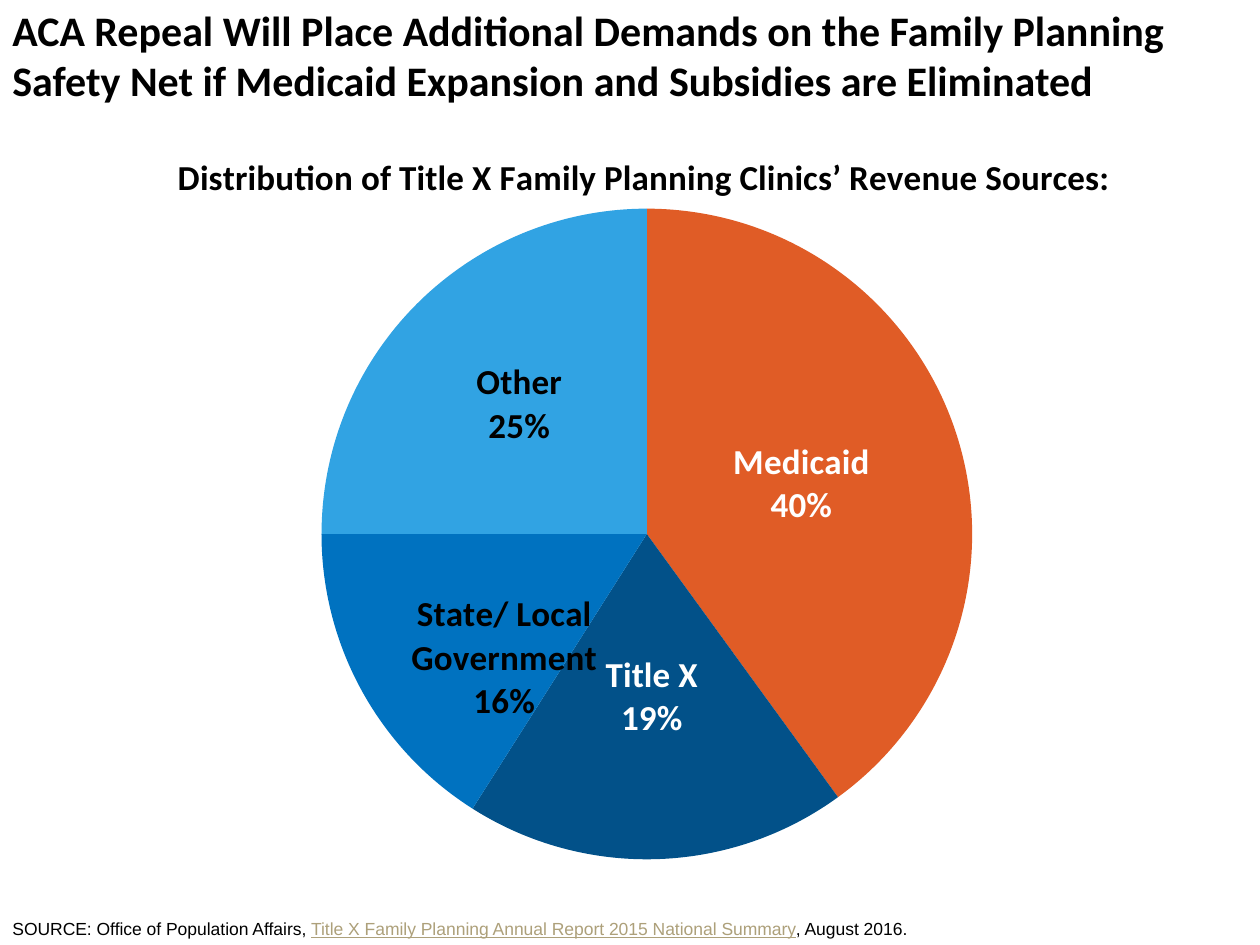
from lxml.etree import SubElement
from pptx import Presentation
from pptx.chart.data import CategoryChartData
from pptx.dml.color import RGBColor
from pptx.enum.chart import XL_CHART_TYPE, XL_LABEL_POSITION
from pptx.enum.text import MSO_ANCHOR
from pptx.oxml import parse_xml
from pptx.oxml.ns import nsdecls, qn
from pptx.util import Pt

BLACK = RGBColor(0x00, 0x00, 0x00)
WHITE = RGBColor(0xFF, 0xFF, 0xFF)
ORANGE = RGBColor(0xE0, 0x5C, 0x26)
NAVY = RGBColor(0x02, 0x51, 0x89)
BLUE = RGBColor(0x00, 0x72, 0xC0)
SKY = RGBColor(0x31, 0xA3, 0xE3)
LINK = RGBColor(0xAD, 0xA0, 0x7A)

HEADING = {"name": "Calibri", "size": Pt(24), "bold": True}
CHART_TEXT = {"name": "Calibri", "size": Pt(20), "bold": True}
SOURCE_TEXT = {"name": "Arial", "size": Pt(10)}

# Source, share, slice colour, label colour, label shift (x, y as chart fractions)
REVENUE = [
    ("Medicaid", 0.40, ORANGE, WHITE, (0, 0)),
    ("Title X", 0.19, NAVY, WHITE, (0, 0)),
    ("State/ Local Government", 0.16, BLUE, BLACK, (0, 0.06)),
    ("Other", 0.25, SKY, BLACK, (-0.01, -0.02)),
]


def format_font(font, style, color):
    for attribute, value in style.items():
        setattr(font, attribute, value)
    font.color.rgb = color


def manual_layout(**places):
    """Return a c:layout; values are child names and their settings, in schema order."""
    children = "".join(f'<c:{name} val="{value}"/>' for name, value in places.items())
    return parse_xml(
        f"<c:layout {nsdecls('c')}><c:manualLayout>{children}</c:manualLayout></c:layout>")


def add_text(slide, box, runs, style, anchor):
    frame = slide.shapes.add_textbox(*map(Pt, box)).text_frame
    frame.word_wrap = True
    frame.vertical_anchor = anchor
    for words, color, underlined in runs:
        run = frame.paragraphs[0].add_run()
        run.text = words
        format_font(run.font, style, color)
        run.font.underline = underlined


def label_slice(point, color, shift):
    label = point.data_label
    format_font(label.font, CHART_TEXT, color)
    label.position = XL_LABEL_POSITION.CENTER


def complete_label(label_xml, shift):
    """Show name over value, and move the label by the given shift."""
    label_xml.find(qn("c:showCatName")).set("val", "1")
    SubElement(label_xml, qn("c:separator")).text = "\n"
    index = label_xml.find(qn("c:idx"))
    index.addnext(parse_xml(
        f'<c:numFmt {nsdecls("c")} formatCode="0%" sourceLinked="0"/>'))
    if any(shift):
        index.addnext(manual_layout(x=shift[0], y=shift[1]))


def add_revenue_pie(slide, box):
    data = CategoryChartData(number_format="0%")
    data.categories = [source for source, *_ in REVENUE]
    data.add_series("Series 1", [share for _, share, *_ in REVENUE])
    chart = slide.shapes.add_chart(XL_CHART_TYPE.PIE, *map(Pt, box), data).chart
    format_font(chart.font, {"name": "Calibri", "size": Pt(10)}, BLACK)
    chart.has_legend = False

    heading = chart.chart_title.text_frame.paragraphs[0].add_run()
    heading.text = "Distribution of Title X Family Planning Clinics’ Revenue Sources:"
    format_font(heading.font, CHART_TEXT, BLACK)
    title_xml = chart.chart_title._element
    for layout in title_xml.findall(qn("c:layout")):
        title_xml.remove(layout)
    title_xml.find(qn("c:tx")).addnext(
        manual_layout(xMode="edge", yMode="edge", x=0.13, y=0.04))

    plot = chart.plots[0]
    plot.vary_by_categories = True
    plot_area = plot._element.getparent()
    for layout in plot_area.findall(qn("c:layout")):
        plot_area.remove(layout)
    plot_area.insert(0, manual_layout(
        layoutTarget="inner", xMode="edge", yMode="edge", x=0.25, y=0.11, w=0.52, h=0.89))

    series = plot.series[0]
    for number, (_, _, fill, color, shift) in enumerate(REVENUE):
        point = series.points[number]
        point.format.fill.solid()
        point.format.fill.fore_color.rgb = fill
        format_font(point.data_label.font, CHART_TEXT, color)
        point.data_label.position = XL_LABEL_POSITION.CENTER
        complete_label(series._element.findall(".//" + qn("c:dLbl"))[number], shift)


def main():
    deck = Presentation()
    deck.slide_width, deck.slide_height = Pt(720), Pt(540)
    slide = deck.slides.add_slide(deck.slide_layouts[6])
    add_revenue_pie(slide, (5, 66, 715, 431))
    add_text(slide, (0, 497, 672, 43), [
        ("SOURCE: Office of Population Affairs, ", BLACK, False),
        ("Title X Family Planning Annual Report 2015 National Summary", LINK, True),
        (", August 2016.", BLACK, False),
    ], SOURCE_TEXT, MSO_ANCHOR.BOTTOM)
    add_text(slide, (0, -1, 720, 72), [
        ("ACA Repeal Will Place Additional Demands on the Family Planning "
         "Safety Net if Medicaid Expansion and Subsidies are Eliminated", BLACK, False),
    ], HEADING, MSO_ANCHOR.TOP)
    deck.save("out.pptx")


if __name__ == "__main__":
    main()
